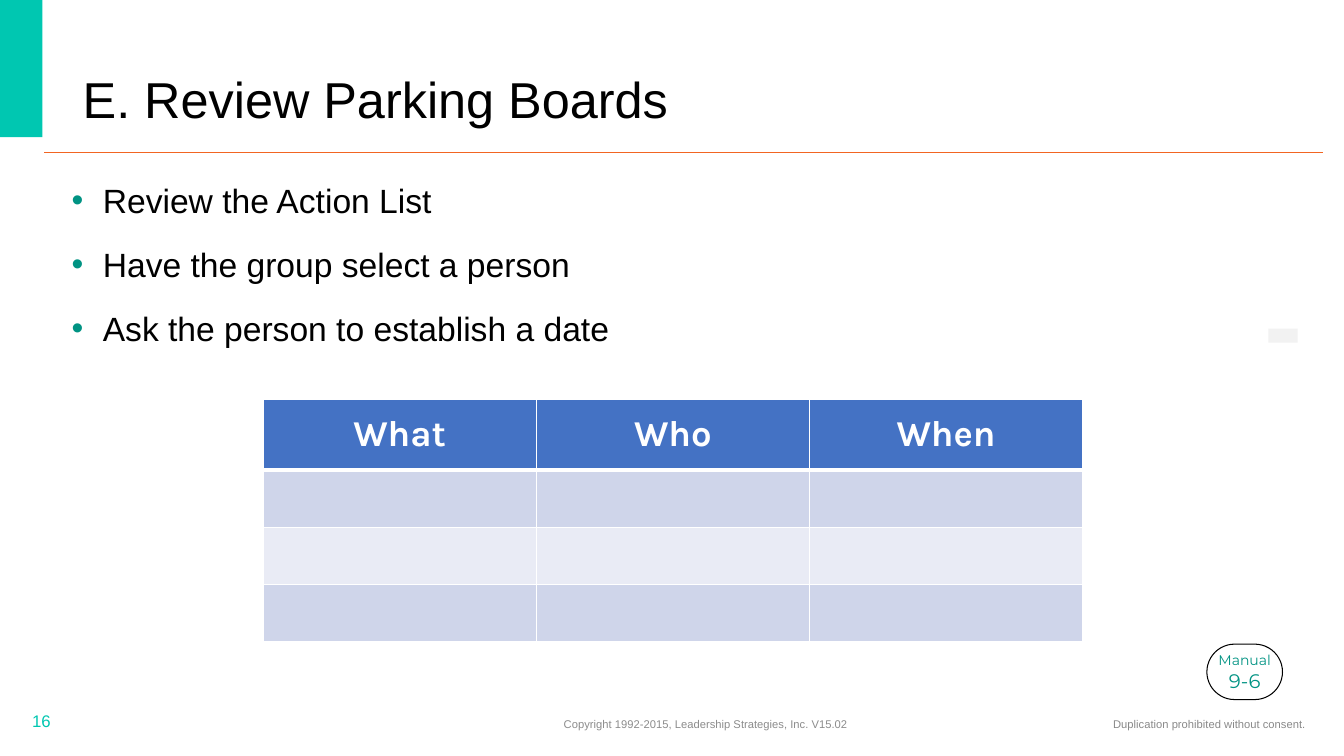
from lxml import etree
from pptx import Presentation
from pptx.dml.color import RGBColor
from pptx.enum.shapes import MSO_CONNECTOR, MSO_SHAPE
from pptx.enum.text import MSO_ANCHOR as ANCHOR, MSO_AUTO_SIZE, PP_ALIGN as ALIGN
from pptx.oxml.ns import qn
from pptx.util import Inches, Pt

COLORS = {
    "black": "000000", "white": "FFFFFF", "teal": "00C7B1", "dark_teal": "009383",
    "orange": "F26522", "gray": "898989", "copyright": "8C8C8C", "pale": "F2F2F2",
    "header": "4472C4", "band_dark": "CFD5EA", "band_light": "E9EBF5",
}


def rgb(name):
    return RGBColor.from_string(COLORS[name])


def place(sp, box):
    sp.left, sp.top, sp.width, sp.height = map(Inches, box)


def style(p, size, color, font="Arial", align=ALIGN.LEFT, bold=False):
    p.alignment = align
    for r in p.runs:
        r.font.size, r.font.name, r.font.bold = Pt(size), font, bold
        r.font.color.rgb = rgb(color)


def add_block(slide, shape, box, fill, line=None):
    sp = slide.shapes.add_shape(shape, *map(Inches, box))
    sp.shadow.inherit = False
    sp.fill.solid()
    sp.fill.fore_color.rgb = rgb(fill)
    if line:
        sp.line.color.rgb = rgb(line)
        sp.line.width = Pt(0.75)
    else:
        sp.line.fill.background()
    return sp


def add_footer(slide, box, text, size, color, align):
    tf = slide.shapes.add_textbox(*map(Inches, box)).text_frame
    tf.word_wrap = True
    tf.vertical_anchor = ANCHOR.MIDDLE
    tf.text = text
    style(tf.paragraphs[0], size, color, align=align)


def add_rule(slide, left, right, y):
    rule = slide.shapes.add_connector(
        MSO_CONNECTOR.STRAIGHT, Inches(left), Inches(y), Inches(right), Inches(y))
    rule.line.color.rgb = rgb("orange")
    rule.line.width = Pt(0.5)
    etree.SubElement(rule._element.spPr, qn("a:effectLst"))


def set_title(slide, box, text):
    title = slide.shapes.title
    place(title, box)
    tf = title.text_frame
    tf.text = text
    tf.auto_size = MSO_AUTO_SIZE.NONE
    tf.vertical_anchor = ANCHOR.BOTTOM
    tf.paragraphs[0].line_spacing = 0.9
    style(tf.paragraphs[0], 36, "black")


def add_bullet(p, indent):
    pPr = p._p.get_or_add_pPr()
    pPr.set("marL", str(Inches(indent)))
    pPr.set("indent", str(-Inches(indent)))
    color = etree.SubElement(pPr, qn("a:buClr"))
    etree.SubElement(color, qn("a:srgbClr"), val=COLORS["dark_teal"])
    etree.SubElement(pPr, qn("a:buFont"), typeface="Arial")
    etree.SubElement(pPr, qn("a:buChar"), char="•")


def set_bullets(slide, box, items):
    body = slide.placeholders[1]
    place(body, box)
    tf = body.text_frame
    tf.text = "\n".join(items)
    tf.auto_size = MSO_AUTO_SIZE.NONE
    tf.vertical_anchor = ANCHOR.TOP
    for i, p in enumerate(tf.paragraphs):
        add_bullet(p, 0.31)
        p.space_before = Pt(17 if i else 0)
        style(p, 24, "black")


def set_borders(cell, bottom):
    """Draw white borders, the lower one with its own width in points."""
    tcPr = cell._tc.get_or_add_tcPr()
    for side, width in (("L", 1), ("R", 1), ("T", 1), ("B", bottom)):
        ln = etree.SubElement(tcPr, qn(f"a:ln{side}"), w=str(Pt(width)))
        fill = etree.SubElement(ln, qn("a:solidFill"))
        etree.SubElement(fill, qn("a:srgbClr"), val=COLORS["white"])


def add_action_table(slide, box, headings, row_fills, header_height):
    rows = len(row_fills)
    table = slide.shapes.add_table(rows, len(headings), *map(Inches, box)).table
    row_height = (box[3] - header_height) / (rows - 1)
    for i, fill in enumerate(row_fills):
        table.rows[i].height = Inches(row_height if i else header_height)
        for cell in table.rows[i].cells:
            set_borders(cell, 1 if i else 3)
            cell.fill.solid()
            cell.fill.fore_color.rgb = rgb(fill)
    for cell, heading in zip(table.rows[0].cells, headings):
        cell.text = heading
        cell.vertical_anchor = ANCHOR.MIDDLE
        style(cell.text_frame.paragraphs[0], 26, "white", "Karla", ALIGN.CENTER, True)


def add_manual_badge(slide, box, label, page):
    badge = add_block(slide, MSO_SHAPE.ROUNDED_RECTANGLE, box, "white", "black")
    badge.adjustments[0] = 0.5
    tf = badge.text_frame
    tf.word_wrap = False
    tf.vertical_anchor = ANCHOR.MIDDLE
    tf.text = f"{label}\n{page}"
    for p, size in zip(tf.paragraphs, (10, 14)):
        style(p, size, "dark_teal", "Montserrat", ALIGN.CENTER)


def add_frame(slide):
    """Add the accent block, the title rule and the footer texts."""
    add_block(slide, MSO_SHAPE.RECTANGLE, (-0.02, -0.02, 0.44, 1.38), "teal")
    add_rule(slide, 0.44, 13.12, 1.51)
    add_footer(slide, (0.22, 6.95, 3, 0.4), "16", 12, "teal", ALIGN.LEFT)
    add_footer(slide, (3.62, 6.98, 6.76, 0.4),
               "Copyright 1992-2015, Leadership Strategies, Inc. V15.02",
               8, "copyright", ALIGN.CENTER)
    add_footer(slide, (7.42, 6.98, 5.63, 0.4),
               "Duplication prohibited without consent.", 8, "gray", ALIGN.RIGHT)


def main():
    prs = Presentation()
    prs.slide_width, prs.slide_height = Inches(13.33), Inches(7.5)
    slide = prs.slides.add_slide(prs.slide_layouts[1])
    add_frame(slide)
    set_title(slide, (0.72, 0.57, 8.12, 0.76), "E. Review Parking Boards")
    set_bullets(slide, (0.61, 1.73, 12.5, 5.03), [
        "Review the Action List",
        "Have the group select a person",
        "Ask the person to establish a date",
    ])
    add_action_table(slide, (2.61, 3.96, 8.13, 2.41), ("What", "Who", "When"),
                     ("header", "band_dark", "band_light", "band_dark"), 0.7)
    add_manual_badge(slide, (11.97, 6.39, 0.75, 0.55), "Manual", "9-6")
    add_block(slide, MSO_SHAPE.RECTANGLE, (12.58, 3.26, 0.29, 0.14), "pale")
    prs.save("out.pptx")


if __name__ == "__main__":
    main()
